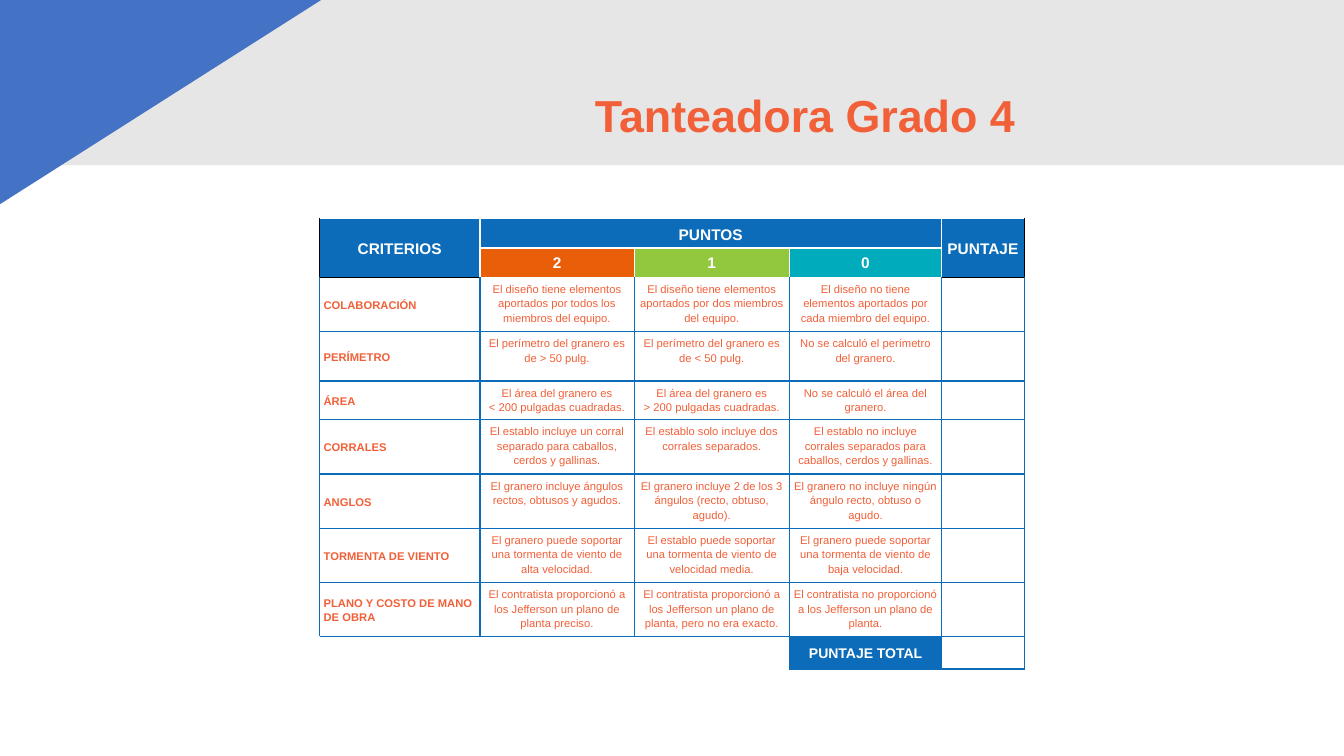
import pptx
import pptx.util
import pptx.dml.color
import pptx.enum.shapes
import pptx.enum.text
import pptx.oxml
import pptx.oxml.ns

TITLE = "Tanteadora Grado 4"
SCORES = ["2", "1", "0"]
CRITERIA = [
    ("COLABORACIÓN",
     "El diseño tiene elementos aportados por todos los miembros del equipo.",
     "El diseño tiene elementos aportados por dos miembros del equipo.",
     "El diseño no tiene elementos aportados por cada miembro del equipo."),
    ("PERÍMETRO",
     "El perímetro del granero es de > 50 pulg.",
     "El perímetro del granero es de < 50 pulg.",
     "No se calculó el perímetro del granero."),
    ("ÁREA",
     "El área del granero es\n< 200 pulgadas cuadradas.",
     "El área del granero es\n> 200 pulgadas cuadradas.",
     "No se calculó el área del granero."),
    ("CORRALES",
     "El establo incluye un corral separado para caballos, cerdos y gallinas.",
     "El establo solo incluye dos corrales separados.",
     "El establo no incluye corrales separados para caballos, cerdos y gallinas."),
    ("ANGLOS",
     "El granero incluye ángulos rectos, obtusos y agudos.",
     "El granero incluye 2 de los 3 ángulos (recto, obtuso, agudo).",
     "El granero no incluye ningún ángulo recto, obtuso o agudo."),
    ("TORMENTA DE VIENTO",
     "El granero puede soportar una tormenta de viento de alta velocidad.",
     "El establo puede soportar una tormenta de viento de velocidad media.",
     "El granero puede soportar una tormenta de viento de baja velocidad."),
    ("PLANO Y COSTO DE MANO DE OBRA",
     "El contratista proporcionó a los Jefferson un plano de planta preciso.",
     "El contratista proporcionó a los Jefferson un plano de planta, pero no era exacto.",
     "El contratista no proporcionó a los Jefferson un plano de planta."),
]
GRID = [
    ["CRITERIOS", "PUNTOS", "", "", "PUNTAJE"],
    ["", *SCORES, ""],
    *[[*row, ""] for row in CRITERIA],
    ["", "", "", "PUNTAJE TOTAL", ""],
]
MERGES = [((0, 0), (1, 0)), ((0, 1), (0, 3)), ((0, 4), (1, 4)), ((9, 0), (9, 2))]
COL_WIDTHS = [1.59, 1.53, 1.54, 1.51, 0.82]
ROW_HEIGHTS = [0.28, 0.28, 0.51, 0.49, 0.37, 0.51, 0.51, 0.51, 0.51, 0.32]
LAST = len(GRID) - 1

THEME = {
    "font": "Arial", "title": 32, "header": 11, "total": 10, "body": 8,
    "band": "E7E6E6", "corner": "4472C4", "text": "F16038", "blue": "0D6CB9",
    "white": "FFFFFF", "black": "000000", "scores": ["E95E09", "92C83E", "00ACBB"],
}
Inches = pptx.util.Inches
ALIGN = pptx.enum.text.PP_ALIGN
ANCHOR = pptx.enum.text.MSO_ANCHOR
SHAPE = pptx.enum.shapes.MSO_SHAPE


def rgb(name):
    return pptx.dml.color.RGBColor.from_string(name)


def add_run(p, text, size, color, bold):
    r = p.add_run()
    r.text = text
    r.font.name = THEME["font"]
    r.font.size = pptx.util.Pt(size)
    r.font.bold = bold
    r.font.color.rgb = rgb(color)


def add_plain_shape(slide, kind, box, color):
    sp = slide.shapes.add_shape(kind, *map(Inches, box))
    sp.shadow.inherit = False
    sp.fill.solid()
    sp.fill.fore_color.rgb = rgb(color)
    sp.line.fill.background()
    return sp


def cell_style(row, col):
    if row == 1 and 1 <= col <= 3:
        return THEME["scores"][col - 1], THEME["header"], THEME["white"], True
    if row < 2:
        return THEME["blue"], THEME["header"], THEME["white"], True
    if (row, col) == (LAST, 3):
        return THEME["blue"], THEME["total"], THEME["white"], True
    return THEME["white"], THEME["body"], THEME["text"], col == 0


def cell_borders(row, col):
    white, black, blue = THEME["white"], THEME["black"], THEME["blue"]
    outer = col in (0, 4)
    if row < 2:
        edges = {"L": black if col == 0 else white, "R": black if col == 4 else white,
                 "T": white, "B": black if outer else white}
        if row == 1 and col > 1:
            del edges["T"]
        return edges
    edges = dict.fromkeys("LRTB", blue)
    if row == 2:
        edges["T"] = black if outer else white
    if (row, col) == (LAST, 0):
        edges["L"] = edges["B"] = white
    return edges


def draw_borders(cell, edges):
    tc_pr = cell._tc.get_or_add_tcPr()
    for i, (side, color) in enumerate(edges.items()):
        ln = pptx.oxml.parse_xml(
            f'<a:ln{side} {pptx.oxml.ns.nsdecls("a")} w="12700"><a:solidFill>'
            f'<a:srgbClr val="{color}"/></a:solidFill></a:ln{side}>')
        tc_pr.insert(i, ln)


def fill_cell(cell, row, col, text):
    fill, size, color, bold = cell_style(row, col)
    cell.fill.solid()
    cell.fill.fore_color.rgb = rgb(fill)
    cell.margin_left = cell.margin_right = Inches(0.04)
    cell.margin_top = cell.margin_bottom = Inches(0.04)
    middle = row in (0, LAST) or col == 0
    cell.vertical_anchor = ANCHOR.MIDDLE if middle else ANCHOR.TOP
    p = cell.text_frame.paragraphs[0]
    p.alignment = ALIGN.LEFT if col == 0 and row >= 2 else ALIGN.CENTER
    p.line_spacing = 1.15
    if not text:
        end = pptx.oxml.parse_xml(
            f'<a:endParaRPr {pptx.oxml.ns.nsdecls("a")} sz="{size * 100}"/>')
        p._p.append(end)
        return
    for i, line in enumerate(text.split("\n")):
        if i:
            p.add_line_break()
        add_run(p, line, size, color, bold)


def add_rubric(slide):
    frame = slide.shapes.add_table(
        len(GRID), len(COL_WIDTHS), Inches(3.17), Inches(2.17),
        Inches(sum(COL_WIDTHS)), Inches(sum(ROW_HEIGHTS)))
    table = frame.table
    table.first_row = table.horz_banding = False
    for column, width in zip(table.columns, COL_WIDTHS):
        column.width = Inches(width)
    for line, height in zip(table.rows, ROW_HEIGHTS):
        line.height = Inches(height)
    for first, last in MERGES:
        table.cell(*first).merge(table.cell(*last))
    for row, texts in enumerate(GRID):
        for col, text in enumerate(texts):
            cell = table.cell(row, col)
            fill_cell(cell, row, col, text)
            if not cell.is_spanned:
                draw_borders(cell, cell_borders(row, col))


def main():
    prs = pptx.Presentation()
    prs.slide_width, prs.slide_height = Inches(13.33), Inches(7.5)
    slide = prs.slides.add_slide(prs.slide_layouts[6])
    add_plain_shape(slide, SHAPE.RECTANGLE, (-0.26, -0.19, 13.59, 1.83), THEME["band"])
    corner = add_plain_shape(slide, SHAPE.RIGHT_TRIANGLE, (-2.57, -1.72, 8.46, 5.38),
                             THEME["corner"])
    corner.rotation = 180
    corner._element.spPr.xfrm.set("flipH", "1")

    tf = slide.shapes.add_textbox(*map(Inches, (0.47, 0.45, 9.7, 1.45))).text_frame
    tf.word_wrap = True
    tf.vertical_anchor = ANCHOR.MIDDLE
    p = tf.paragraphs[0]
    p.alignment = ALIGN.RIGHT
    p.line_spacing = 0.9
    add_run(p, TITLE, THEME["title"], THEME["text"], True)

    add_rubric(slide)
    prs.save("out.pptx")


if __name__ == "__main__":
    main()
